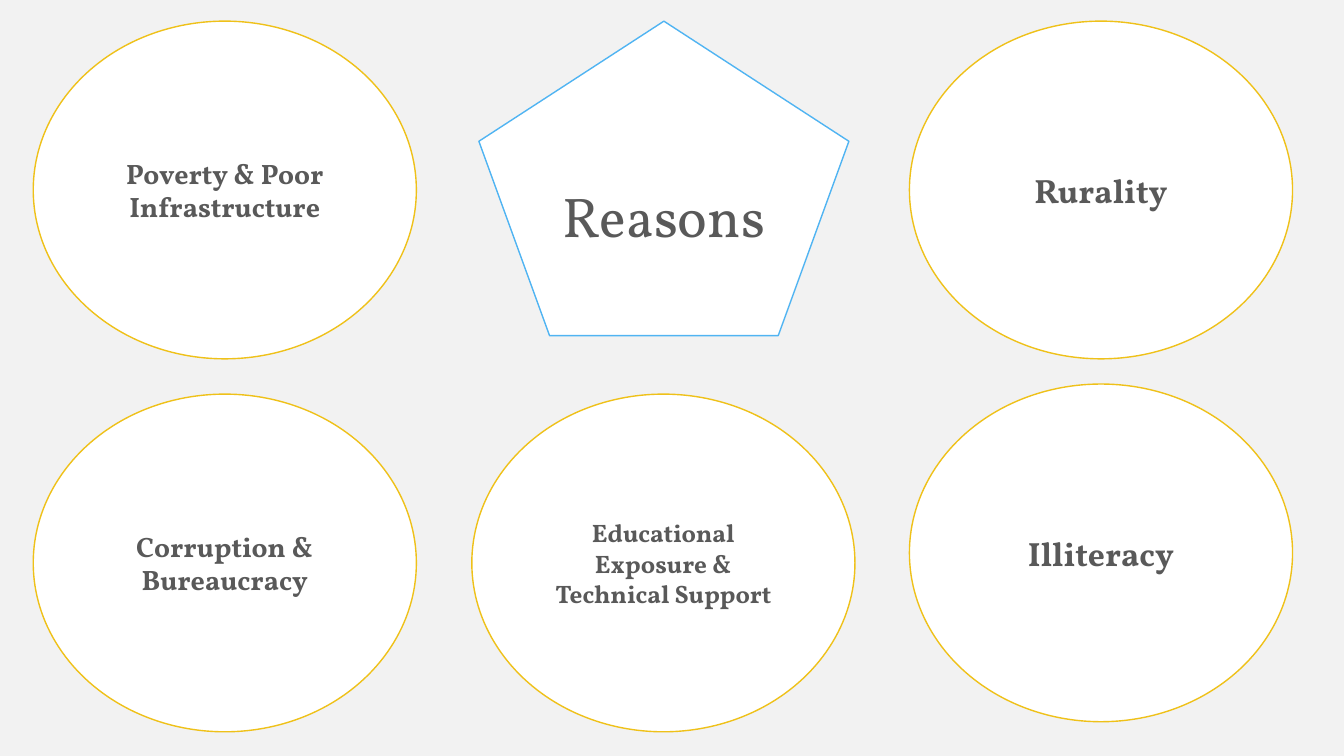
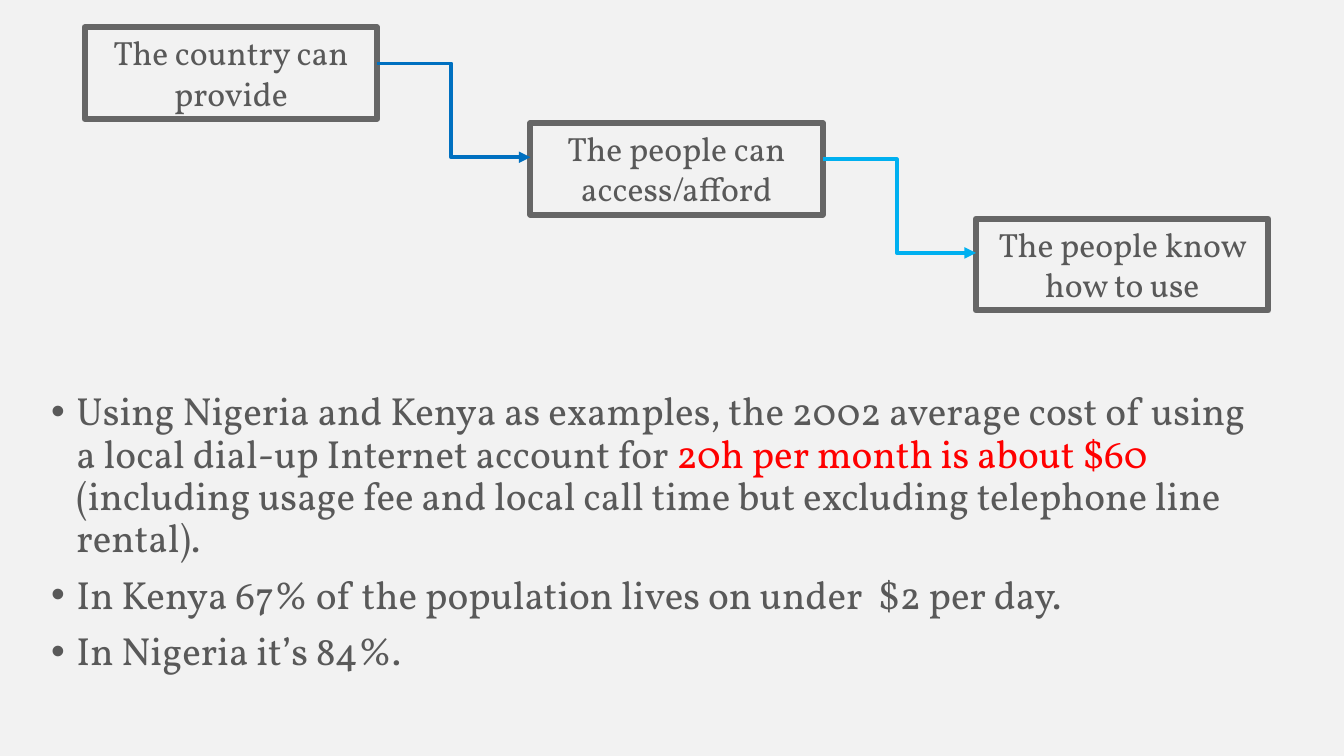
import pptx
import pptx.dml.color
import pptx.enum.shapes
import pptx.enum.text
import pptx.oxml.ns
import pptx.oxml.xmlchemy
import pptx.util

Inches = pptx.util.Inches
Pt = pptx.util.Pt
RGBColor = pptx.dml.color.RGBColor
OxmlElement = pptx.oxml.xmlchemy.OxmlElement
SHAPES = pptx.enum.shapes.MSO_SHAPE
ANCHORS = pptx.enum.text.MSO_ANCHOR
ALIGNMENTS = pptx.enum.text.PP_ALIGN

FONT = "Vollkorn"
COLORS = {
    "background": "F2F2F2",
    "text": "595959",
    "highlight": "FF0000",
    "white": "FFFFFF",
    "pentagon": "50B4F2",
    "circle": "EFC119",
    "box": "666666",
    "first_arrow": "0070C0",
    "second_arrow": "00B0F0",
}


def color(name):
    return RGBColor.from_string(COLORS[name])


def write_text(paragraph, text, size, bold=False, color_name="text", align=None):
    if align is not None:
        paragraph.alignment = align
    run = paragraph.add_run()
    run.text = text
    run.font.name = FONT
    run.font.size = Pt(size)
    run.font.bold = bold
    run.font.color.rgb = color(color_name)


presentation = pptx.Presentation()
presentation.slide_width = Inches(13.33)
presentation.slide_height = Inches(7.5)
background = presentation.slide_master.background.fill
background.solid()
background.fore_color.rgb = color("background")
blank_layout = presentation.slide_layouts[6]

slide = presentation.slides.add_slide(blank_layout)
left, center, right = 0.33, 4.68, 9.02
circle_size = (3.8, 3.35)
reasons = [
    (SHAPES.REGULAR_PENTAGON, 4.75, 0.21, (3.67, 3.12), "pentagon", "Reasons", 40),
    (SHAPES.OVAL, left, 0.21, circle_size, "circle", "Poverty & Poor Infrastructure", 20),
    (SHAPES.OVAL, right, 0.21, circle_size, "circle", "Rurality", 24),
    (SHAPES.OVAL, right, 3.81, circle_size, "circle", "Illiteracy", 24),
    (SHAPES.OVAL, left, 3.91, circle_size, "circle", "Corruption & Bureaucracy", 20),
    (SHAPES.OVAL, center, 3.91, circle_size, "circle",
     "Educational Exposure & Technical Support", 18),
]
for kind, x, y, (width, height), line_color, text, size in reasons:
    shape = slide.shapes.add_shape(kind, Inches(x), Inches(y), Inches(width), Inches(height))
    shape.shadow.inherit = False
    shape.fill.solid()
    shape.fill.fore_color.rgb = color("white")
    shape.line.color.rgb = color(line_color)
    shape.line.width = Pt(1)
    shape.text_frame.vertical_anchor = ANCHORS.MIDDLE
    write_text(shape.text_frame.paragraphs[0], text, size,
               bold=kind == SHAPES.OVAL, align=ALIGNMENTS.CENTER)

slide = presentation.slides.add_slide(blank_layout)
steps = ["The country can provide", "The people can access/afford", "The people know how to use"]
box_width, box_height = 2.9, 0.91
step_x, step_y = 4.42, 0.95
for index, text in enumerate(steps):
    box = slide.shapes.add_shape(
        SHAPES.RECTANGLE, Inches(0.84 + index * step_x), Inches(0.27 + index * step_y),
        Inches(box_width), Inches(box_height))
    box.shadow.inherit = False
    box.fill.background()
    box.line.color.rgb = color("box")
    box.line.width = Pt(4.25)
    box.text_frame.vertical_anchor = ANCHORS.TOP
    write_text(box.text_frame.paragraphs[0], text, 24, align=ALIGNMENTS.CENTER)

for index, arrow_color in enumerate(["first_arrow", "second_arrow"]):
    x = 0.84 + index * step_x
    y = 0.63 + index * step_y
    arrow = slide.shapes.add_connector(
        pptx.enum.shapes.MSO_CONNECTOR.ELBOW, Inches(x + box_width), Inches(y),
        Inches(x + step_x), Inches(y + 0.93))
    arrow.line.color.rgb = color(arrow_color)
    arrow.line.width = Pt(2.75)
    properties = arrow.element.spPr
    bend = properties.find(".//" + pptx.oxml.ns.qn("a:avLst"))
    guide = OxmlElement("a:gd")
    guide.set("name", "adj1")
    guide.set("fmla", "val 48300")
    bend.append(guide)
    head = OxmlElement("a:tailEnd")
    head.set("type", "triangle")
    properties.find(pptx.oxml.ns.qn("a:ln")).append(head)
    properties.append(OxmlElement("a:effectLst"))

facts = [
    [
        ("Using Nigeria and Kenya as examples, the 2002 average cost of using a local "
         "dial-up Internet account for ", "text"),
        ("20h per month is about $60 ", "highlight"),
        ("(including usage fee and local call time but excluding telephone line rental).", "text"),
    ],
    [("In Kenya 67% of the population lives on under  $2 per day.", "text")],
    [("In Nigeria it’s 84%.", "text")],
]
text_box = slide.shapes.add_textbox(Inches(0.41), Inches(3.84), Inches(12.16), Inches(3.45))
frame = text_box.text_frame
frame.word_wrap = True
for index, runs in enumerate(facts):
    paragraph = frame.add_paragraph() if index else frame.paragraphs[0]
    paragraph.line_spacing = 0.9
    if index:
        paragraph.space_before = Pt(10)
    paragraph_properties = paragraph._p.get_or_add_pPr()
    paragraph_properties.set("marL", str(Inches(0.25)))
    paragraph_properties.set("indent", str(-Inches(0.25)))
    bullet_font = OxmlElement("a:buFont")
    bullet_font.set("typeface", "Arial")
    bullet = OxmlElement("a:buChar")
    bullet.set("char", "•")
    paragraph_properties.extend([bullet_font, bullet])
    for text, color_name in runs:
        write_text(paragraph, text, 28, color_name=color_name)

presentation.save("out.pptx")
